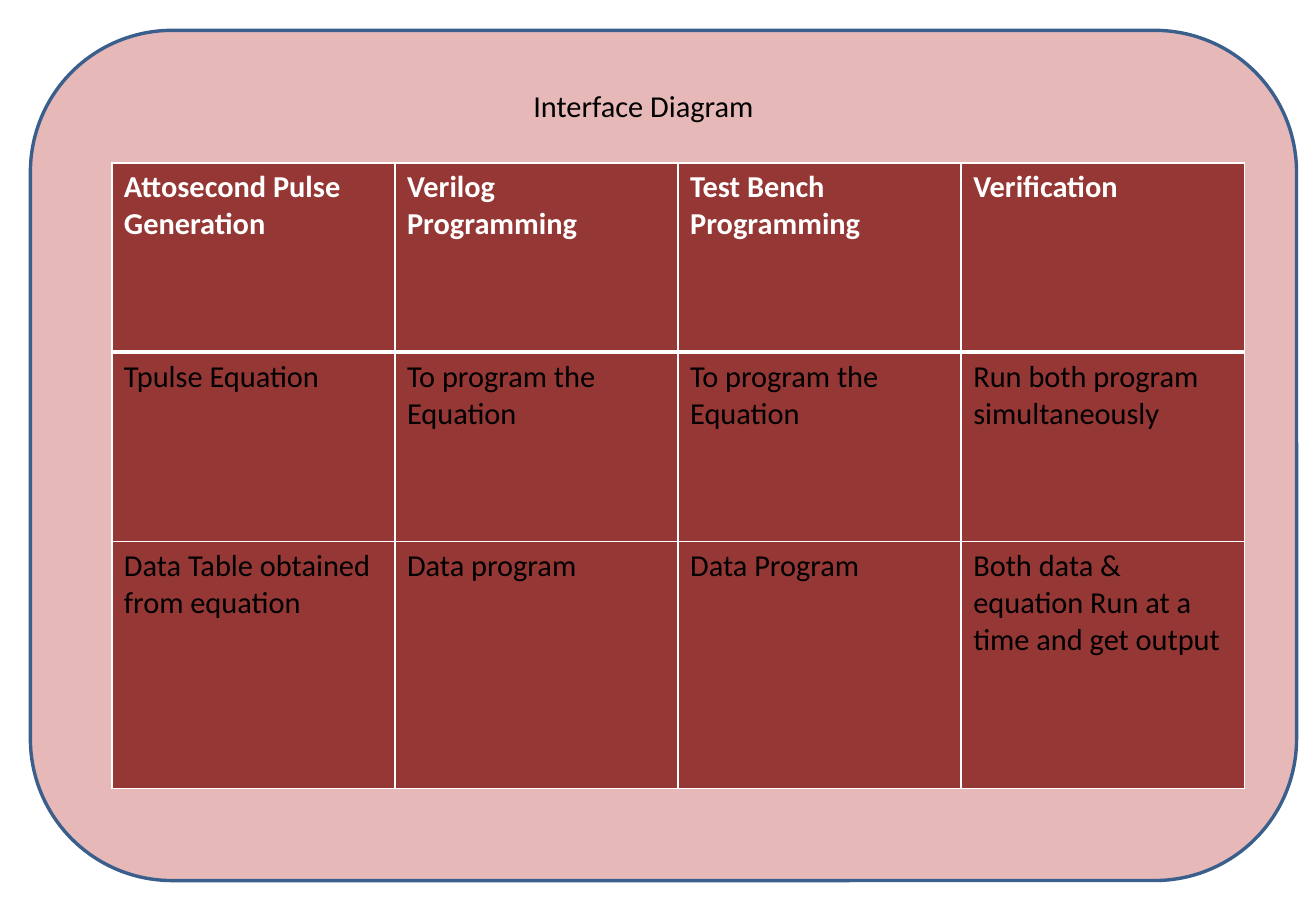
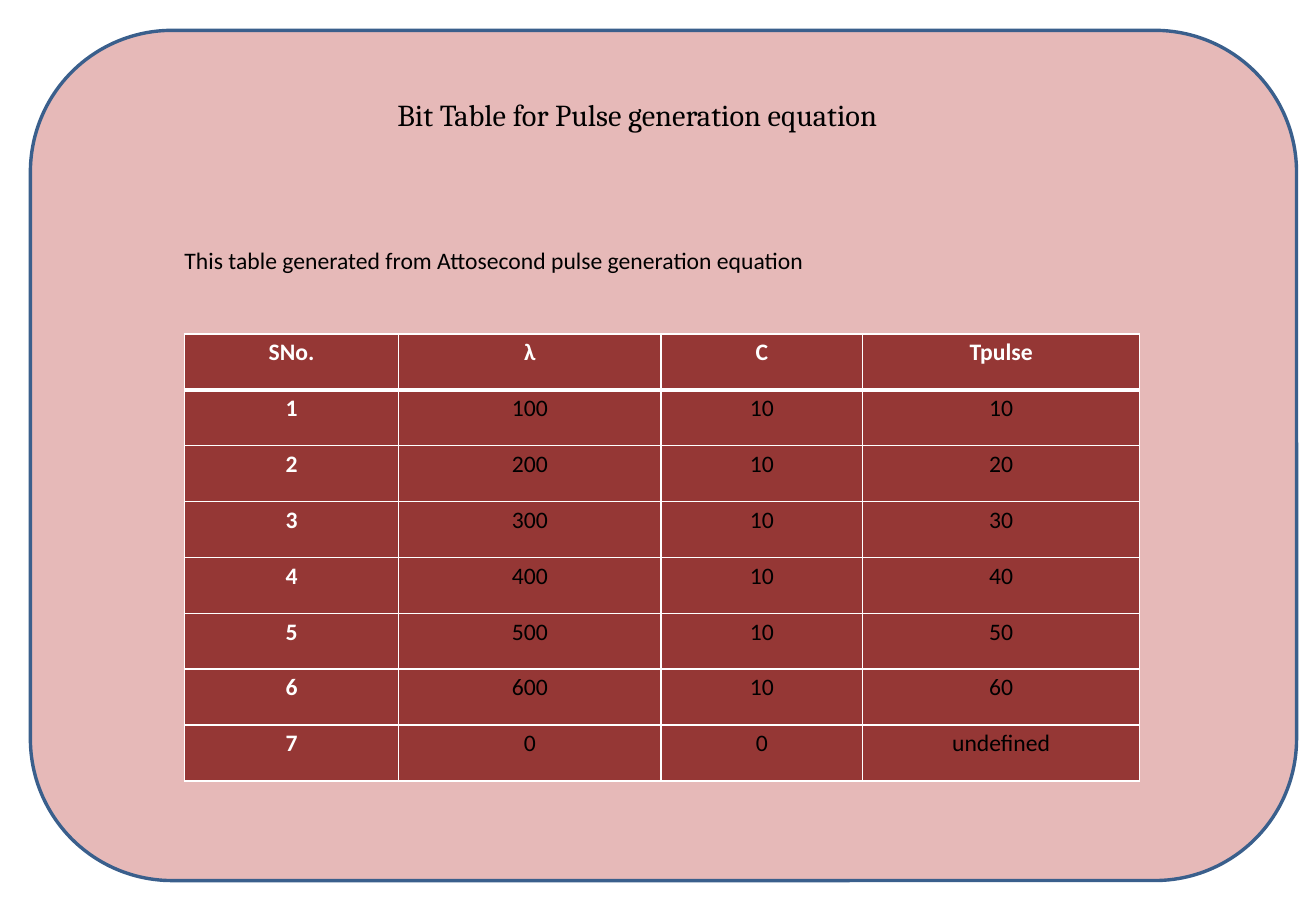
from pptx import Presentation
from pptx import util as u
from pptx.dml.color import RGBColor
from pptx.enum import shapes, text
from pptx.oxml import parse_xml
from pptx.oxml.ns import nsdecls

COLORS = {"panel": "E6B9B8", "outline": "3A5F8C", "cell": "953735",
          "light": "FFFFFF", "dark": "000000"}
PANEL_BOX = (0.25, 0.25, 10.42, 7)
TITLE_ONLY = 5

INTERFACE_ROWS = [
    ["Attosecond Pulse Generation", "Verilog Programming",
     "Test Bench Programming", "Verification"],
    ["Tpulse Equation", "To program the Equation",
     "To program the\nEquation", "Run both program simultaneously"],
    ["Data Table obtained from equation", "Data program", "Data Program",
     "Both data & equation Run at a time and get output"],
]
PULSE_ROWS = [["SNo.", "λ", "C", "Tpulse"]]
PULSE_ROWS += [[str(n), str(n * 100), "10", str(n * 10)] for n in range(1, 7)]
PULSE_ROWS += [["7", "0", "0", "undefined"]]


def rgb(name):
    return RGBColor.from_string(COLORS[name])


def inches(box):
    return [u.Inches(length) for length in box]


def write(frame, wording, size, font="Calibri", color="dark", bold=False,
          align=text.PP_ALIGN.LEFT, spacing=None):
    for index, line in enumerate(wording.split("\n")):
        paragraph = frame.paragraphs[0] if index == 0 else frame.add_paragraph()
        paragraph.alignment = align
        paragraph.line_spacing = spacing
        run = paragraph.add_run()
        run.text = line
        run.font.size = u.Pt(size)
        run.font.name = font
        run.font.bold = bold
        run.font.color.rgb = rgb(color)


def add_panel_slide(prs, heading, box, font, align):
    slide = prs.slides.add_slide(prs.slide_layouts[TITLE_ONLY])
    panel = slide.shapes.add_shape(shapes.MSO_SHAPE.ROUNDED_RECTANGLE,
                                   *inches(PANEL_BOX))
    panel.shadow.inherit = False
    panel.fill.solid()
    panel.fill.fore_color.rgb = rgb("panel")
    panel.line.color.rgb = rgb("outline")
    panel.line.width = u.Pt(2)

    title = slide.shapes.title
    title.element.addprevious(panel.element)
    title.left, title.top, title.width, title.height = inches(box)
    frame = title.text_frame
    frame.auto_size = text.MSO_AUTO_SIZE.NONE
    frame.vertical_anchor = text.MSO_ANCHOR.TOP
    write(frame, heading, 18, font, align=align)
    return slide


def set_borders(cell, widths):
    properties = cell._tc.get_or_add_tcPr()
    for side, width in widths.items():
        properties.append(parse_xml(
            f'<a:ln{side} {nsdecls("a")} w="{u.Pt(width)}"><a:solidFill>'
            f'<a:srgbClr val="{COLORS["light"]}"/></a:solidFill></a:ln{side}>'))


def add_grid(slide, left, top, widths, heights, rows, size, bold_first=False,
             margins=None, **style):
    box = inches((left, top, sum(widths), sum(heights)))
    grid = slide.shapes.add_table(len(rows), len(widths), *box).table
    grid.horz_banding = False
    for column, width in zip(grid.columns, widths):
        column.width = u.Inches(width)
    for r, (row, height) in enumerate(zip(rows, heights)):
        grid.rows[r].height = u.Inches(height)
        for c, wording in enumerate(row):
            cell = grid.cell(r, c)
            set_borders(cell, {"L": 1, "R": 1, "T": 3 if r == 1 else 1,
                               "B": 3 if r == 0 else 1})
            cell.fill.solid()
            cell.fill.fore_color.rgb = rgb("cell")
            if margins:
                (cell.margin_left, cell.margin_top,
                 cell.margin_right, cell.margin_bottom) = inches(margins)
            strong = r == 0 or (bold_first and c == 0)
            write(cell.text_frame, wording, size, bold=strong,
                  color="light" if strong else "dark", **style)


def add_caption(slide, wording, box):
    frame = slide.shapes.add_textbox(*inches(box)).text_frame
    frame.word_wrap = True
    frame.vertical_anchor = text.MSO_ANCHOR.MIDDLE
    write(frame, wording, 14)


def interface_slide(prs):
    slide = add_panel_slide(prs, "Interface Diagram", (0.92, 0.67, 8.75, 0.6),
                            "Calibri", text.PP_ALIGN.CENTER)
    add_grid(slide, 0.92, 1.34, [2.33] * 4, [1.56, 1.56, 2.03],
             INTERFACE_ROWS, 18)


def pulse_slide(prs):
    slide = add_panel_slide(prs, "Bit Table for Pulse generation equation",
                            (3.17, 0.74, 4.39, 0.71), "Cambria",
                            text.PP_ALIGN.LEFT)
    add_caption(slide,
                "This table generated from Attosecond pulse generation equation",
                (1.42, 1.7, 5.36, 0.88))
    add_grid(slide, 1.52, 2.75, [1.76, 2.16, 1.66, 2.28],
             [0.46] * len(PULSE_ROWS), PULSE_ROWS, 14, bold_first=True,
             margins=(0.07, 0, 0.07, 0), align=text.PP_ALIGN.CENTER,
             spacing=1.15)


def main():
    prs = Presentation()
    prs.slide_width, prs.slide_height = inches((10.83, 7.5))
    interface_slide(prs)
    pulse_slide(prs)
    prs.save("out.pptx")


if __name__ == "__main__":
    main()
